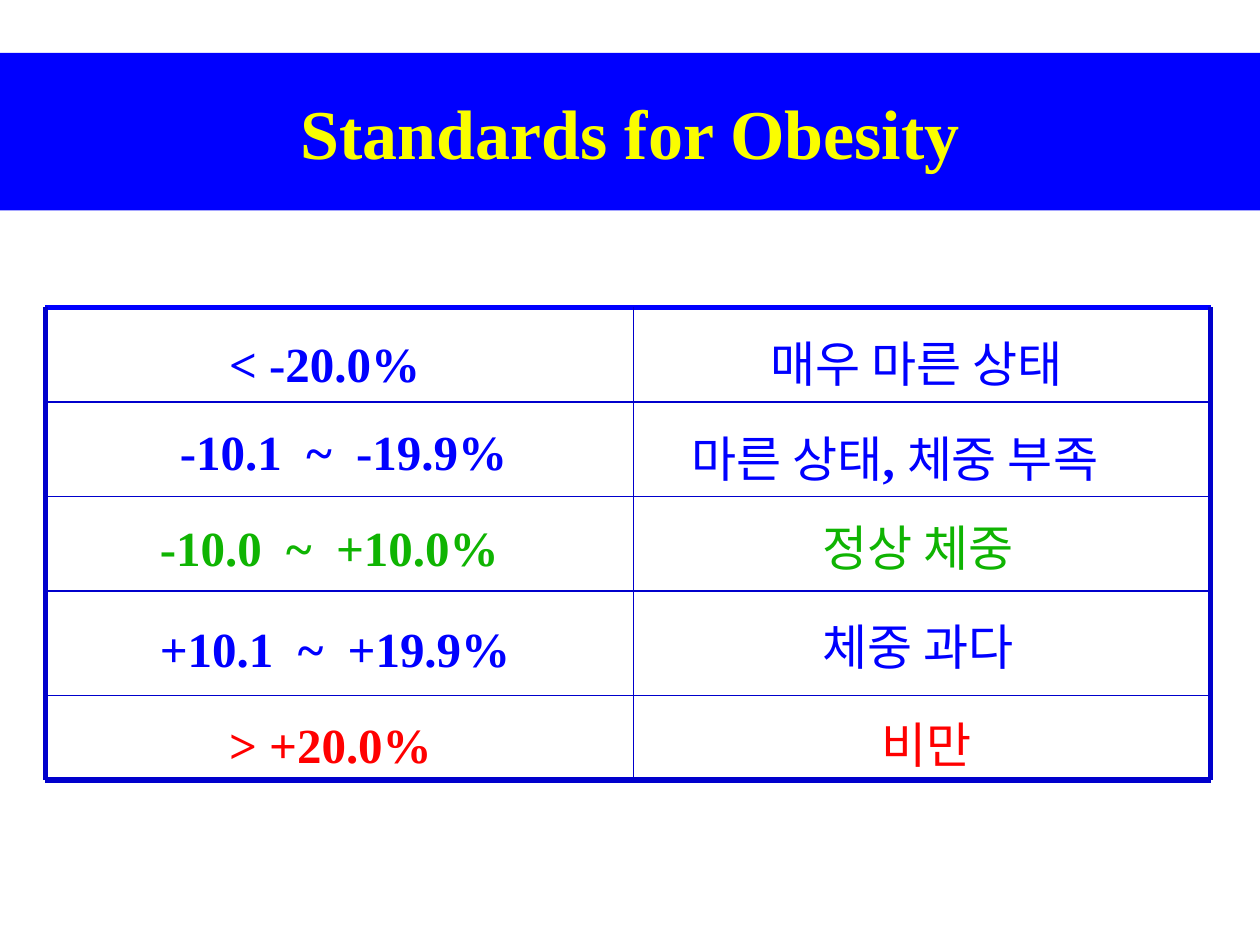
from lxml import etree
from pptx import Presentation
from pptx.dml.color import RGBColor
from pptx.enum import shapes, text
from pptx.oxml.ns import qn
from pptx.util import Inches, Pt

LATIN, KOREAN = "Times New Roman", "Noto Sans CJK KR"
BLUE, RULE_BLUE, GREEN, RED, YELLOW = "0000FF", "0000CC", "0FB402", "FF0000", "FAFD00"
LABEL_HEIGHT = 0.57
ROW_EDGES = [2.44, 3.19, 3.94, 4.69, 5.52, 6.19]
COLUMN_EDGES = [0.36, 5.03, 9.61]

# Each row: colour, then (left, top, width, runs) for the range and its meaning
ROWS = [
    (BLUE, (1.72, 2.6, 2.1, ["< -20.0%"]), (6.02, 2.6, 2.87, ["매우 마른 상태"])),
    (BLUE, (1.33, 3.3, 2.83, ["-10.1  ~  -19.9%"]),
     (5.39, 3.35, 3.9, ["마른 상태", ", ", "체중 부족"])),
    (GREEN, (1.17, 4.06, 2.92, ["-10.0  ~  +10.0%"]), (6.43, 4.06, 1.93, ["정상 체중"])),
    (BLUE, (1.17, 4.86, 3.01, ["+10.1  ~  +19.9%"]), (6.43, 4.84, 1.93, ["체중 과다"])),
    (RED, (1.72, 5.62, 1.93, ["> +20.0%"]), (6.9, 5.62, 0.99, ["비만"])),
]


def rgb(color):
    return RGBColor.from_string(color)


def add_run(paragraph, words):
    """Add a run in the Korean font, or in bold Latin if it is all ASCII."""
    run = paragraph.add_run()
    run.text = words
    run.font.bold = words.isascii()
    run.font.name = LATIN if words.isascii() else KOREAN
    east_asian = etree.SubElement(run.font._element, qn("a:ea"))
    east_asian.set("typeface", run.font.name)


def add_banner(slide, left, top, width, height):
    banner = slide.shapes.add_shape(
        shapes.MSO_SHAPE.RECTANGLE, Inches(left), Inches(top), Inches(width), Inches(height))
    banner.shadow.inherit = False
    banner.fill.solid()
    banner.fill.fore_color.rgb = rgb(BLUE)
    banner.line.fill.background()
    banner.text_frame.vertical_anchor = text.MSO_ANCHOR.MIDDLE
    paragraph = banner.text_frame.paragraphs[0]
    paragraph.alignment = text.PP_ALIGN.CENTER
    paragraph.font.size = Pt(40)
    paragraph.font.color.rgb = rgb(YELLOW)
    add_run(paragraph, "Standards for Obesity")


def add_rule(slide, start, end, color, weight):
    rule = slide.shapes.add_connector(
        shapes.MSO_CONNECTOR.STRAIGHT, *map(Inches, start), *map(Inches, end))
    rule.line.color.rgb = rgb(color)
    rule.line.width = Pt(weight)
    etree.SubElement(rule._element.spPr, qn("a:effectLst"))


def add_grid(slide, columns, rows):
    """Rule the given edges, with a heavy outer frame."""
    left, right, top, bottom = columns[0], columns[-1], rows[0], rows[-1]
    for y in rows:
        add_rule(slide, (left, y), (right, y), BLUE if y == top else RULE_BLUE,
                 3 if y in (top, bottom) else 0.75)
    for x in columns:
        add_rule(slide, (x, top), (x, bottom), RULE_BLUE, 3 if x in (left, right) else 0.75)


def add_label(slide, left, top, width, runs, color):
    label = slide.shapes.add_textbox(
        Inches(left), Inches(top), Inches(width), Inches(LABEL_HEIGHT))
    label.text_frame.word_wrap = False
    label.text_frame.auto_size = text.MSO_AUTO_SIZE.SHAPE_TO_FIT_TEXT
    paragraph = label.text_frame.paragraphs[0]
    paragraph.alignment = text.PP_ALIGN.LEFT
    paragraph.font.size = Pt(28)
    paragraph.font.color.rgb = rgb(color)
    for words in runs:
        add_run(paragraph, words)


def main():
    presentation = Presentation()
    presentation.slide_width = Inches(10)
    presentation.slide_height = Inches(7.5)
    slide = presentation.slides.add_slide(presentation.slide_layouts[6])
    add_banner(slide, 0, 0.42, 10, 1.25)
    add_grid(slide, COLUMN_EDGES, ROW_EDGES)
    for color, *labels in ROWS:
        for label in labels:
            add_label(slide, *label, color)
    presentation.save("out.pptx")


if __name__ == "__main__":
    main()
